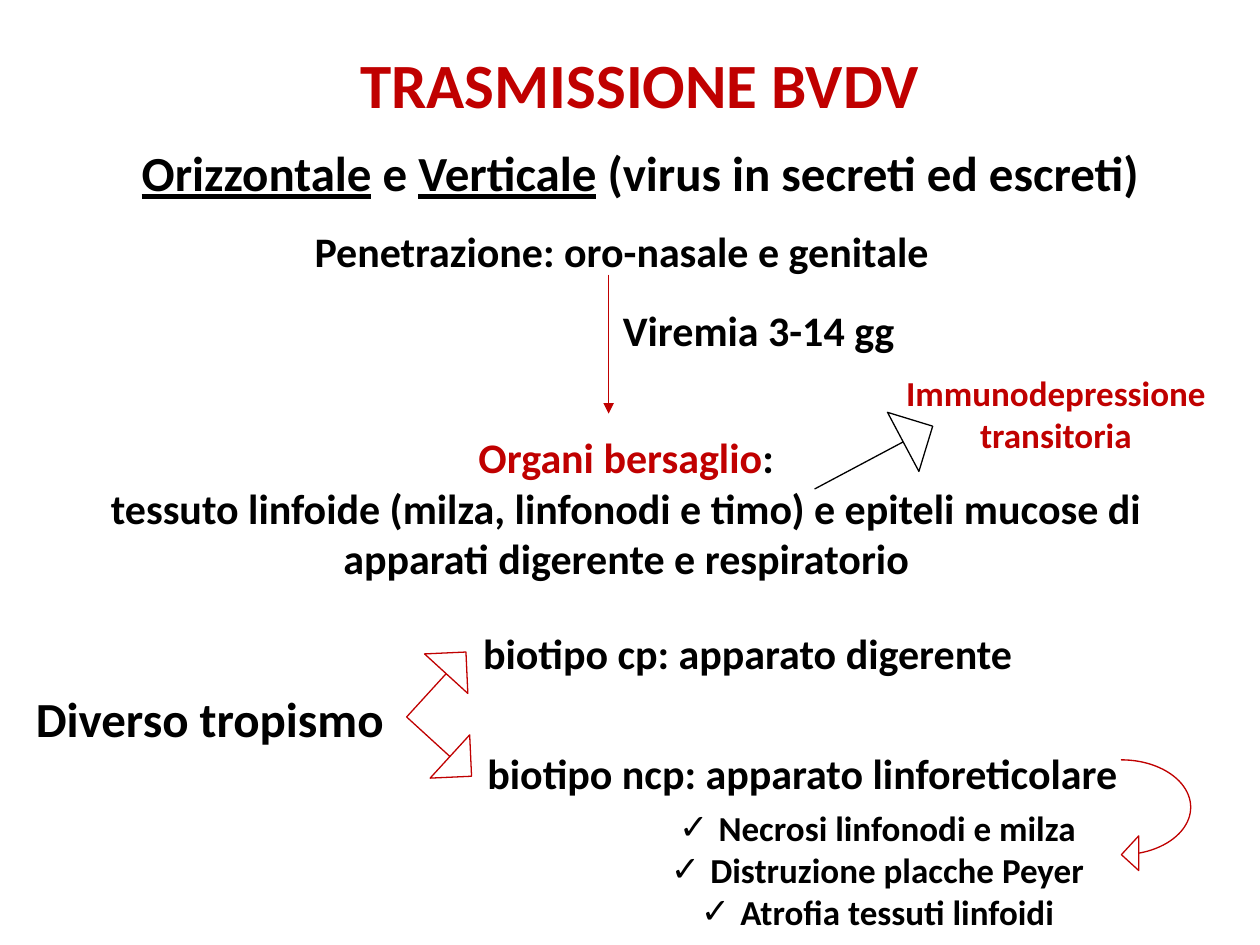
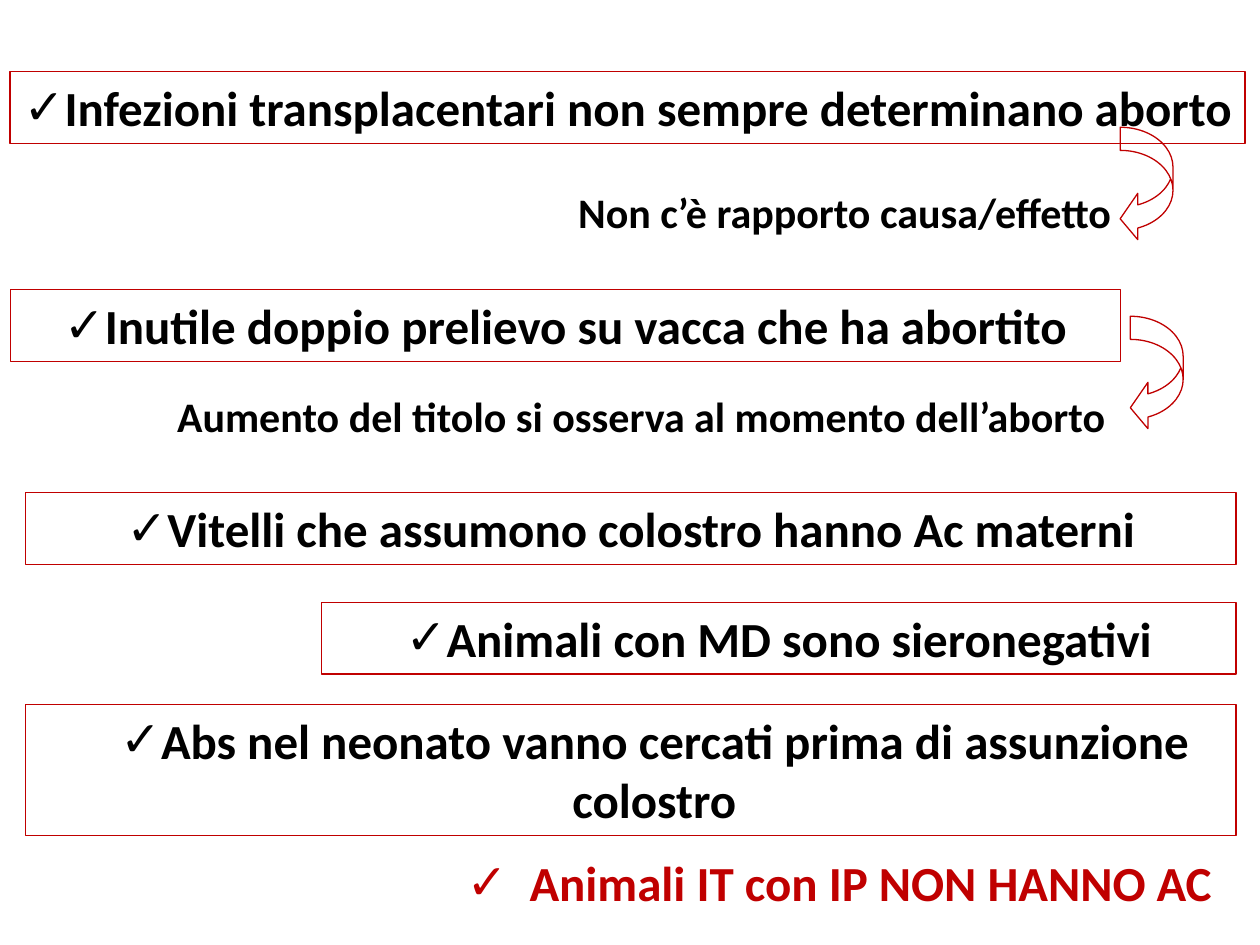
from lxml.etree import SubElement
from pptx import Presentation
from pptx.dml.color import RGBColor
from pptx.enum.shapes import MSO_CONNECTOR, MSO_SHAPE
from pptx.enum.text import MSO_ANCHOR, MSO_AUTO_SIZE, PP_ALIGN
from pptx.oxml.ns import qn
from pptx.util import Pt

RED, BLACK = "C00000", "000000"
FONT = "Calibri"
LINE_WIDTH = 0.75
ROW = 36  # height of one line of 24 pt text with its margins
BOX_ROW = 41  # the same for 28 pt


def paint(color_format, hex_color):
    color_format.rgb = RGBColor.from_string(hex_color)


def outline(shape, color=RED):
    paint(shape.line.color, color)
    shape.line.width = Pt(LINE_WIDTH)


def place(shape, box):
    for side, length in zip(("left", "top", "width", "height"), box):
        setattr(shape, side, Pt(length))


def add_check(paragraph, margin, indent):
    """Give the paragraph a tick bullet with the given indents in points."""
    properties = paragraph._p.get_or_add_pPr()
    properties.set("marL", str(Pt(margin)))
    properties.set("indent", str(Pt(indent)))
    SubElement(properties, qn("a:buFont")).set("typeface", "Arial")
    SubElement(properties, qn("a:buChar")).set("char", "✓")


def write(shape, paragraphs, size, color=BLACK, align=PP_ALIGN.CENTER, wrap=True, check=None):
    """Fill the shape; a paragraph is a string or a list of (text, format) runs."""
    frame = shape.text_frame
    frame_format = {"word_wrap": wrap, "auto_size": MSO_AUTO_SIZE.SHAPE_TO_FIT_TEXT,
                    "vertical_anchor": MSO_ANCHOR.TOP}
    for name, value in frame_format.items():
        setattr(frame, name, value)
    for number, content in enumerate(paragraphs):
        paragraph = frame.add_paragraph() if number else frame.paragraphs[0]
        paragraph.alignment = align
        paragraph.space_before = Pt(0)
        if check:
            add_check(paragraph, *check)
        runs = [(content, {})] if isinstance(content, str) else content
        for text, changes in runs:
            run = paragraph.add_run()
            run.text = text
            run_format = {"name": FONT, "size": Pt(size), "bold": True, "color": color} | changes
            paint(run.font.color, run_format.pop("color"))
            for name, value in run_format.items():
                setattr(run.font, name, value)


def add_text(slide, box, paragraphs, size=24, **options):
    textbox = slide.shapes.add_textbox(*map(Pt, box))
    write(textbox, paragraphs, size, **options)
    return textbox


def add_arrow(slide, preset, box, adjustments, color=RED, rotation=0):
    arrow = slide.shapes.add_shape(preset, *map(Pt, box))
    arrow.shadow.inherit = False
    arrow.fill.background()
    arrow.rotation = rotation
    outline(arrow, color)
    for number, value in enumerate(adjustments):
        arrow.adjustments[number] = value


def add_thin_arrow(slide, x, top, bottom):
    connector = slide.shapes.add_connector(
        MSO_CONNECTOR.STRAIGHT, Pt(x), Pt(top), Pt(x), Pt(bottom))
    outline(connector)
    SubElement(connector.line._get_or_add_ln(), qn("a:tailEnd")).set("type", "triangle")
    SubElement(connector._element.spPr, qn("a:effectLst"))


def add_heading(slide, left, top):
    title = slide.shapes.title
    place(title, (left + 180.7, top, 348.5, 51))
    write(title, ["TRASMISSIONE BVDV"], 36, RED)
    underlined = {"underline": True}
    add_text(slide, (left, top + 55.5, 710, BOX_ROW),
             [[("Orizzontale", underlined), (" e ", {}), ("Verticale", underlined),
               (" (virus in secreti ed escreti)", {})]], 28)


def add_infection_path(slide, left, top):
    """Entry of the virus, viremia, target organs and their consequence."""
    axis = left + 332.7
    add_text(slide, (left + 155.5, top, 369.4, ROW),
             ["Penetrazione: oro-nasale e genitale"], wrap=False)
    add_thin_arrow(slide, axis, top + 31.7, top + 111)
    add_text(slide, (axis, top + 45.3, 171.4, ROW), ["Viremia 3-14 gg"], wrap=False)
    add_text(slide, (left, top + 118, 685.4, 94.3),
             [[("Organi bersaglio", {"color": RED}), (":", {})],
              "tessuto linfoide (milza, linfonodi e timo) e epiteli mucose di "
              "apparati digerente e respiratorio"])
    add_arrow(slide, MSO_SHAPE.DOWN_ARROW, (left + 465.1, top + 98, 38.2, 76.3),
              (0, 0.5), BLACK, 242)
    add_text(slide, (left + 494.7, top + 83.5, 187.2, 55.4),
             ["Immunodepressione", "transitoria"], 20, color=RED, wrap=False)


def add_tropism(slide, left, top):
    """The two biotypes and the lesions of the second one."""
    biotypes = left + 255.6
    add_text(slide, (left, top + 35.2, 215.3, BOX_ROW), ["Diverso tropismo"], 28, wrap=False)
    add_arrow(slide, MSO_SHAPE.LEFT_UP_ARROW, (left + 210.3, top + 20.1, 67, 67),
              (0, 0.25, 0.25), rotation=132.4)
    add_text(slide, (biotypes, top, 319, ROW), ["biotipo cp: apparato digerente"])
    add_text(slide, (biotypes, top + 68.4, 381.6, ROW),
             ["biotipo ncp: apparato linforeticolare"])
    lesions = slide.placeholders[1]
    place(lesions, (left + 324, top + 102.2, 330.5, 80))
    write(lesions, ["Necrosi linfonodi e milza", "Distruzione placche Peyer",
                    "Atrofia tessuti linfoidi"], 20, check=(22.5, -22.5))
    add_arrow(slide, MSO_SHAPE.CURVED_LEFT_ARROW, (left + 628.6, top + 79.2, 39.6, 64.1),
              (0, 0.5, 0.25))


def add_statement(slide, box, text, margin=0):
    outline(add_text(slide, box, [text], 28, check=(margin, 0)))


def add_consequence(slide, box, text, arrow_gap, arrow_rise, **options):
    """A line of text with a curved arrow at its right that starts above it."""
    left, top, width, _ = box
    add_arrow(slide, MSO_SHAPE.CURVED_LEFT_ARROW,
              (left + width + arrow_gap, top - arrow_rise, 30.2, 65.5), (0.438, 0.875, 0.333))
    add_text(slide, box, [text], **options)


def build_transmission(deck):
    slide = deck.slides.add_slide(deck.slide_layouts[1])
    add_heading(slide, 10.8, 22.3)
    add_infection_path(slide, 15.1, 125.3)
    add_tropism(slide, 12.2, 355)


def build_diagnosis(deck):
    slide = deck.slides.add_slide(deck.slide_layouts[6])
    left, inner_left, right = 5.8, 14.4, 706.3
    inner_width = right - inner_left
    add_statement(slide, (left, 41, 705.6, BOX_ROW),
                  "Infezioni transplacentari non sempre determinano aborto")
    add_consequence(slide, (323.3, 103, 324, ROW), "Non c’è rapporto causa/effetto",
                    -7.2, 30.3, align=PP_ALIGN.LEFT, wrap=False)
    add_statement(slide, (left, 165.6, 634.3, BOX_ROW),
                  "Inutile doppio prelievo su vacca che ha abortito")
    add_consequence(slide, (93.6, 219.6, 545.8, ROW),
                    "Aumento del titolo si osserva al momento dell’aborto", 6.5, 38.9)
    add_statement(slide, (inner_left, 281.5, inner_width, BOX_ROW),
                  "Vitelli che assumono colostro hanno Ac materni")
    add_statement(slide, (183.6, 344.2, right - 183.6, BOX_ROW),
                  "Animali con MD sono sieronegativi")
    add_statement(slide, (inner_left, 402.5, inner_width, 75),
                  "Abs nel neonato vanno cercati prima di assunzione colostro", 27)
    add_text(slide, (252.7, 483.8, right - 252.7, BOX_ROW),
             ["Animali IT con IP NON HANNO AC"], 28, color=RED, check=(36, -36))


def main():
    deck = Presentation()
    deck.slide_width, deck.slide_height = Pt(720), Pt(540)
    build_transmission(deck)
    build_diagnosis(deck)
    deck.save("out.pptx")


if __name__ == "__main__":
    main()
